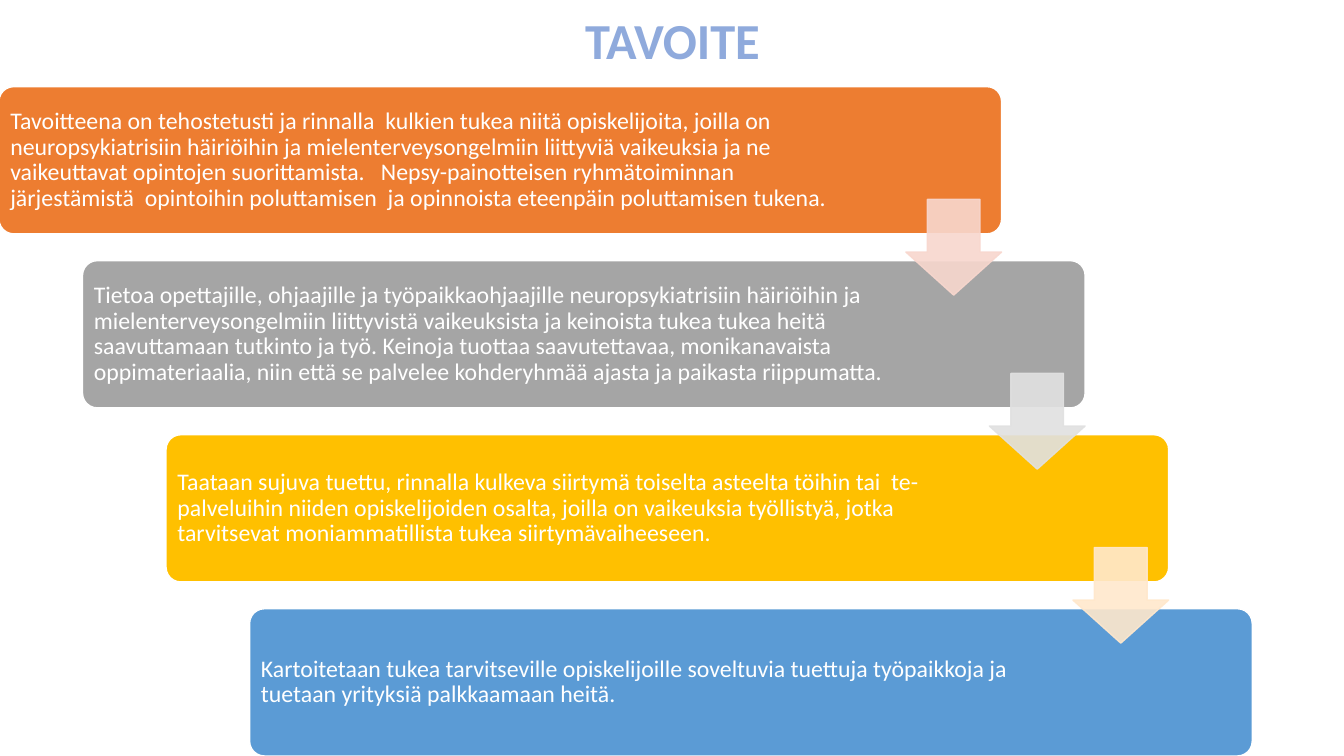
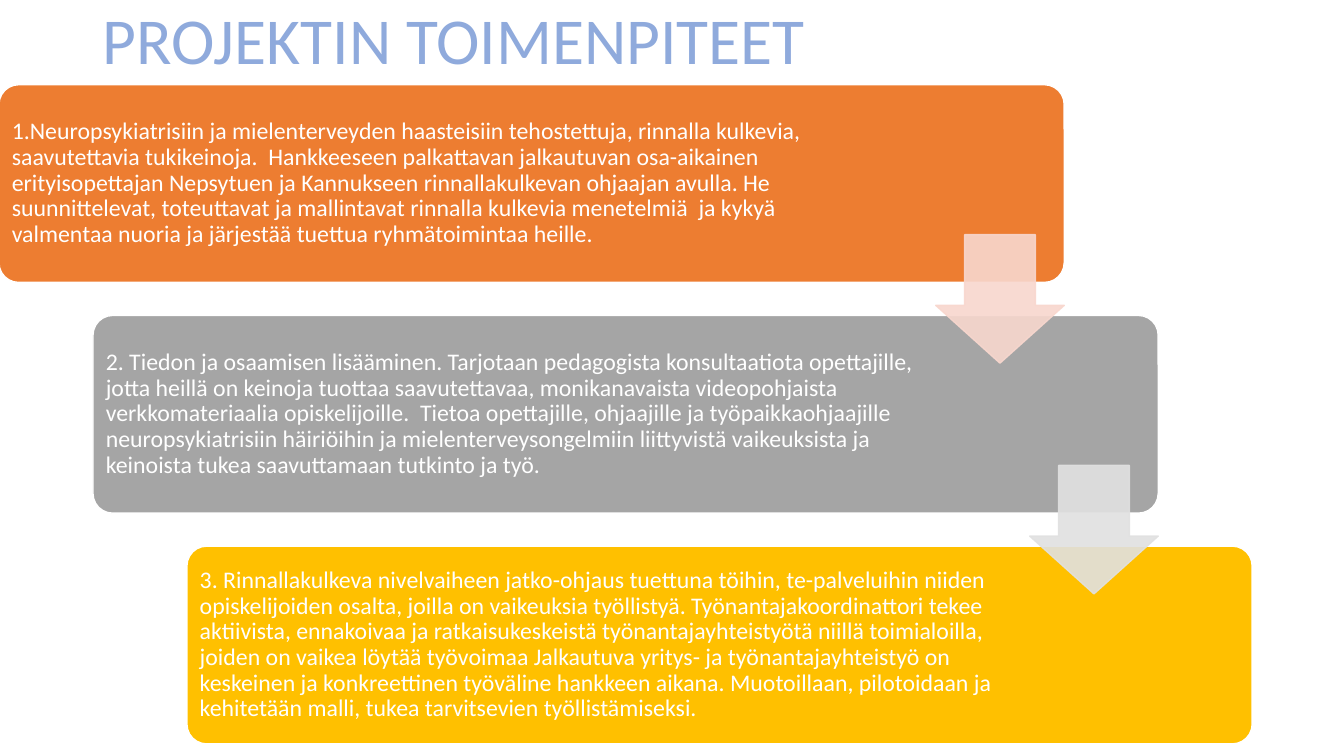
from lxml import etree
from pptx import Presentation
from pptx import util as u
from pptx.dml.color import RGBColor
from pptx.enum import shapes, text
from pptx.oxml.ns import qn

FONT = "Calibri"
COLORS = {
    "title": "8FAADC", "white": "FFFFFF",
    "orange": "ED7D31", "gray": "A5A5A5", "gold": "FFC000", "blue": "5B9BD5",
    "pale_orange": "F8D7CE", "pale_gray": "E1E1E1", "pale_gold": "FFE8CC",
}
CARD_FILLS = ["orange", "gray", "gold", "blue"]
ARROW_FILLS = ["pale_orange", "pale_gray", "pale_gold"]


def rgb(name):
    return RGBColor.from_string(COLORS[name])


def write(sp, content, size, color, bold=False, align=text.PP_ALIGN.LEFT):
    """Put one formatted paragraph, centred vertically, in a shape."""
    tf = sp.text_frame
    tf.word_wrap = True
    tf.vertical_anchor = text.MSO_ANCHOR.MIDDLE
    p = tf.paragraphs[0]
    p.alignment = align
    p.line_spacing = 0.9
    r = p.add_run()
    r.text = content
    r.font.name, r.font.size, r.font.bold = FONT, u.Pt(size), bold
    r.font.color.rgb = rgb(color)


def add_block(s, kind, box, fill, line, adjustments, opacity=100):
    """Add a filled, outlined preset shape."""
    sp = s.shapes.add_shape(kind, *map(u.Inches, box))
    sp.shadow.inherit = False
    for i, value in enumerate(adjustments):
        sp.adjustments[i] = value
    sp.fill.solid()
    sp.fill.fore_color.rgb = rgb(fill)
    sp.line.color.rgb = rgb(line)
    sp.line.width = u.Pt(1)
    if opacity < 100:
        for color in sp._element.spPr.iter(qn("a:srgbClr")):
            etree.SubElement(color, qn("a:alpha"), val=str(opacity * 1000))
    return sp


def add_title(s, content, **fmt):
    sp = s.shapes.add_textbox(*map(u.Inches, (0.92, -0.01, 11.5, 0.87)))
    write(sp, content, color="title", **fmt)


def add_staircase(s, box, texts, card_share, right_insets):
    """Cards stepping down and right across the box, linked by arrows."""
    x, y, w, h = box
    card_w, card_h = w * card_share[0], h * card_share[1]
    steps = len(texts) - 1
    dx, dy = (w - card_w) / steps, (h - card_h) / steps

    # Cards; the first has its own right inset
    for i, content in enumerate(texts):
        sp = add_block(s, shapes.MSO_SHAPE.ROUNDED_RECTANGLE,
                       (x + i * dx, y + i * dy, card_w, card_h),
                       CARD_FILLS[i], "white", [0.1])
        tf = sp.text_frame
        tf.margin_left = tf.margin_top = tf.margin_bottom = u.Inches(0.07)
        tf.margin_right = u.Inches(right_insets[min(i, 1)])
        write(sp, content, 17, "white")

    # Arrows, flush with the card's right edge and centred on each gap
    side = 0.65 * card_h
    for i in range(steps):
        left = x + i * dx + card_w - side
        top = y + i * dy + (card_h + dy - side) / 2
        add_block(s, shapes.MSO_SHAPE.DOWN_ARROW, (left, top, side, side),
                  ARROW_FILLS[i], ARROW_FILLS[i], [0.55, 0.45], opacity=90)


def build_goal(s):
    add_title(s, "TAVOITE", size=36, bold=True, align=text.PP_ALIGN.CENTER)
    add_staircase(s, (-0.01, 0.86, 12.43, 6.64), [
        "Tavoitteena on tehostetusti ja rinnalla  kulkien tukea niitä opiskelijoita, "
        "joilla on neuropsykiatrisiin häiriöihin ja mielenterveysongelmiin liittyviä "
        "vaikeuksia ja ne vaikeuttavat opintojen suorittamista.   Nepsy-painotteisen "
        "ryhmätoiminnan järjestämistä  opintoihin poluttamisen  ja opinnoista "
        "eteenpäin poluttamisen tukena.",
        "Tietoa opettajille, ohjaajille ja työpaikkaohjaajille neuropsykiatrisiin "
        "häiriöihin ja mielenterveysongelmiin liittyvistä vaikeuksista ja keinoista "
        "tukea tukea heitä saavuttamaan tutkinto ja työ. Keinoja tuottaa "
        "saavutettavaa, monikanavaista oppimateriaalia, niin että se palvelee "
        "kohderyhmää ajasta ja paikasta riippumatta.",
        "Taataan sujuva tuettu, rinnalla kulkeva siirtymä toiselta asteelta töihin "
        "tai  te-palveluihin niiden opiskelijoiden osalta, joilla on vaikeuksia "
        "työllistyä, jotka tarvitsevat moniammatillista tukea siirtymävaiheeseen.",
        "Kartoitetaan tukea tarvitseville opiskelijoille soveltuvia tuettuja "
        "työpaikkoja ja tuetaan yrityksiä palkkaamaan heitä.",
    ], card_share=(0.8, 0.22), right_insets=(1.69, 1.86))


def build_measures(s):
    add_title(s, "PROJEKTIN TOIMENPITEET", size=46.8)
    add_staircase(s, (-0.01, 0.84, 12.43, 6.54), [
        "1.Neuropsykiatrisiin ja mielenterveyden haasteisiin tehostettuja, rinnalla "
        "kulkevia, saavutettavia tukikeinoja.  Hankkeeseen palkattavan jalkautuvan "
        "osa-aikainen erityisopettajan Nepsytuen ja Kannukseen rinnallakulkevan "
        "ohjaajan avulla. He suunnittelevat, toteuttavat ja mallintavat rinnalla "
        "kulkevia menetelmiä  ja kykyä valmentaa nuoria ja järjestää tuettua "
        "ryhmätoimintaa heille.",
        "2. Tiedon ja osaamisen lisääminen. Tarjotaan pedagogista konsultaatiota "
        "opettajille, jotta heillä on keinoja tuottaa saavutettavaa, monikanavaista "
        "videopohjaista verkkomateriaalia opiskelijoille.  Tietoa opettajille, "
        "ohjaajille ja työpaikkaohjaajille neuropsykiatrisiin häiriöihin ja "
        "mielenterveysongelmiin liittyvistä vaikeuksista ja keinoista tukea "
        "saavuttamaan tutkinto ja työ.",
        "3. Rinnallakulkeva nivelvaiheen jatko-ohjaus tuettuna töihin, "
        "te-palveluihin niiden opiskelijoiden osalta, joilla on vaikeuksia "
        "työllistyä. Työnantajakoordinattori tekee aktiivista, ennakoivaa ja "
        "ratkaisukeskeistä työnantajayhteistyötä niillä toimialoilla, joiden on "
        "vaikea löytää työvoimaa Jalkautuva yritys- ja työnantajayhteistyö on "
        "keskeinen ja konkreettinen työväline hankkeen aikana. Muotoillaan, "
        "pilotoidaan ja kehitetään malli, tukea tarvitsevien työllistämiseksi.",
    ], card_share=(0.85, 0.3), right_insets=(2.08, 2.28))


def main():
    prs = Presentation()
    prs.slide_width, prs.slide_height = u.Inches(13.33), u.Inches(7.5)
    for build in (build_goal, build_measures):
        build(prs.slides.add_slide(prs.slide_layouts[6]))
    prs.save("out.pptx")


if __name__ == "__main__":
    main()
